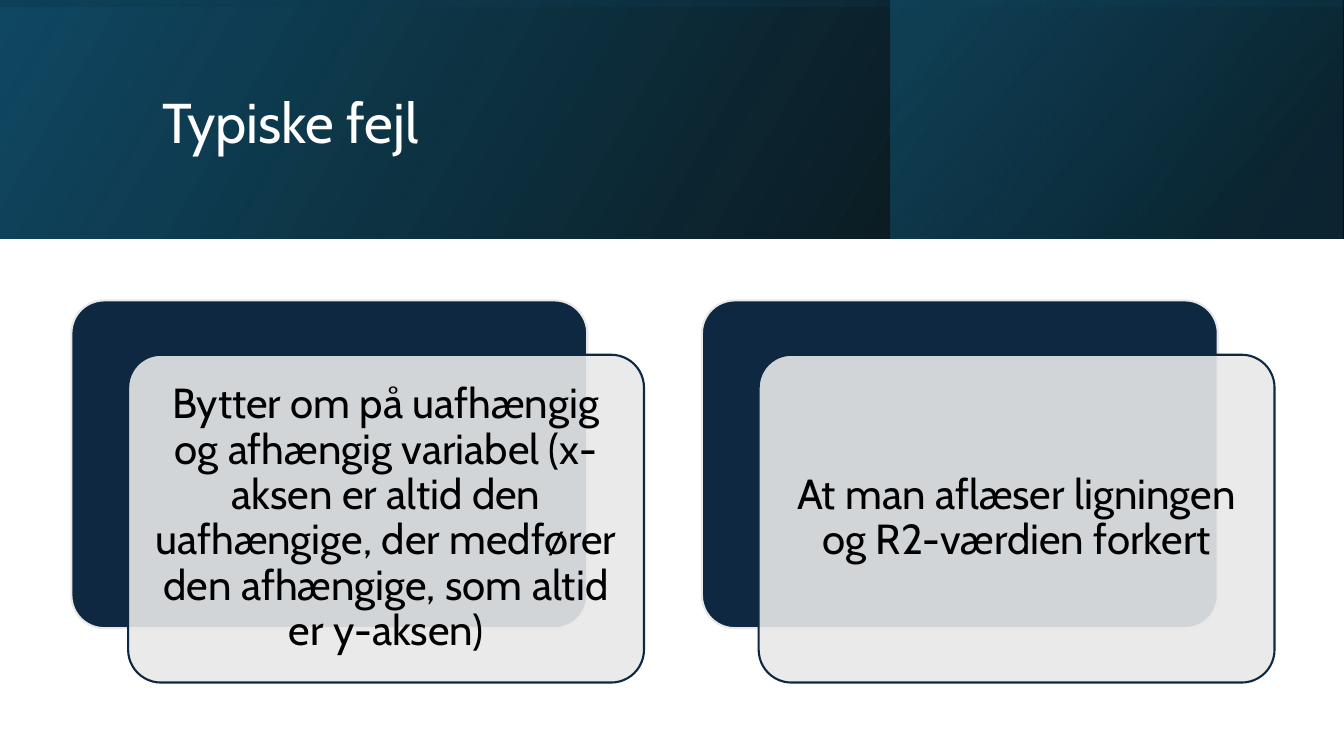
from dataclasses import dataclass

from lxml import etree
from pptx import Presentation
from pptx.dml.color import RGBColor
from pptx.enum.shapes import MSO_SHAPE
from pptx.enum.text import MSO_ANCHOR, PP_ALIGN
from pptx.oxml.ns import qn
from pptx.util import Cm, Pt

RECT, ROUND = MSO_SHAPE.RECTANGLE, MSO_SHAPE.ROUNDED_RECTANGLE
MIDDLE = MSO_ANCHOR.MIDDLE
LEFT, CENTER = PP_ALIGN.LEFT, PP_ALIGN.CENTER


@dataclass(frozen=True)
class Theme:
    font: str = "Cabin"
    navy: str = "0E2841"
    pale: str = "E8E8E8"
    black: str = "000000"
    white: str = "FFFFFF"
    blue: str = "104862"
    deep: str = "0B3041"
    teal: str = "156082"
    title: int = 40
    body: int = 30
    edge: float = 1.5


THEME = Theme()
WIDE, TALL, BAND = 33.87, 19.05, 6.02

# Box in cm, rotation, gradient angle, stops of (position, colour, opacity in %)
BANDS = [
    ((0, 0, WIDE, BAND), 0, 30,
     [(0, THEME.black, 96), (1, THEME.blue, 100)]),
    ((22.45, 0, 11.38, BAND), 0, 40,
     [(0.19, THEME.deep, 68), (1, THEME.teal, 48)]),
    (((WIDE - BAND) / 2, (BAND - WIDE) / 2, BAND, WIDE), 270, 10,
     [(0.23, THEME.blue, 16), (0.99, THEME.black, 45)]),
]

CARDS = [
    "Bytter om på uafhængig og afhængig variabel (x-aksen er altid den "
    "uafhængige, der medfører den afhængige, som altid er y-aksen)",
    "At man aflæser ligningen og R2-værdien forkert",
]
CARD_X, CARD_Y, CARD_W, CARD_H = 1.8, 7.57, 13, 8.26
STEP, SHIFT_X, SHIFT_Y = 15.89, 1.43, 1.37


def assign(obj, props):
    for name, value in props.items():
        setattr(obj, name, value)


def color(code):
    return RGBColor.from_string(code)


def fade(shape, levels):
    """Give each colour so far set on the shape its opacity in percent."""
    tones = shape._element.spPr.iter(qn("a:srgbClr"))
    for tone, level in zip(list(tones), levels):
        etree.SubElement(tone, qn("a:alpha")).set("val", str(level * 1000))


def add_form(slide, kind, box):
    form = slide.shapes.add_shape(kind, *map(Cm, box))
    form.shadow.inherit = False
    return form


def add_band(slide, box, turn, angle, stops):
    band = add_form(slide, RECT, box)
    band.rotation = turn
    band._element.spPr.find(qn("a:xfrm")).set("flipH", "1")
    band.line.fill.background()
    band.fill.gradient()
    band.fill.gradient_angle = angle
    for stop, (place, code, _) in zip(band.fill.gradient_stops, stops):
        stop.position = place
        stop.color.rgb = color(code)
    fade(band, [level for _, _, level in stops])


def add_panel(slide, box, fill, line, level=100):
    panel = add_form(slide, ROUND, box)
    panel.adjustments[0] = 0.1
    panel.fill.solid()
    panel.fill.fore_color.rgb = color(fill)
    if level < 100:
        fade(panel, [level])
    panel.line.color.rgb = color(line)
    panel.line.width = Pt(THEME.edge)
    return panel


def write(shape, text, size, code, align, inset):
    frame = shape.text_frame
    sides = ("left", "top", "right", "bottom")
    assign(frame, {f"margin_{side}": Cm(inset) for side in sides})
    assign(frame, {"word_wrap": True, "vertical_anchor": MIDDLE})
    para = frame.paragraphs[0]
    assign(para, {"text": text, "alignment": align, "line_spacing": 0.9})
    assign(para.font, {"name": THEME.font, "size": Pt(size)})
    para.font.color.rgb = color(code)


def add_card(slide, left, text):
    """Draw a dark panel with a see-through text panel shifted over it."""
    size = (CARD_W, CARD_H)
    add_panel(slide, (left, CARD_Y, *size), THEME.navy, THEME.pale)
    front = add_panel(slide, (left + SHIFT_X, CARD_Y + SHIFT_Y, *size),
                      THEME.pale, THEME.navy, 90)
    write(front, text, THEME.body, THEME.black, CENTER, 0.3)


def main():
    deck = Presentation()
    assign(deck, {"slide_width": Cm(WIDE), "slide_height": Cm(TALL)})
    slide = deck.slides.add_slide(deck.slide_layouts[6])
    for band in BANDS:
        add_band(slide, *band)
    title = slide.shapes.add_textbox(Cm(3.84), Cm(0.97), Cm(27), Cm(4.37))
    write(title, "Typiske fejl", THEME.title, THEME.white, LEFT, 0.25)
    for i, text in enumerate(CARDS):
        add_card(slide, CARD_X + i * STEP, text)
    deck.save("out.pptx")


if __name__ == "__main__":
    main()
